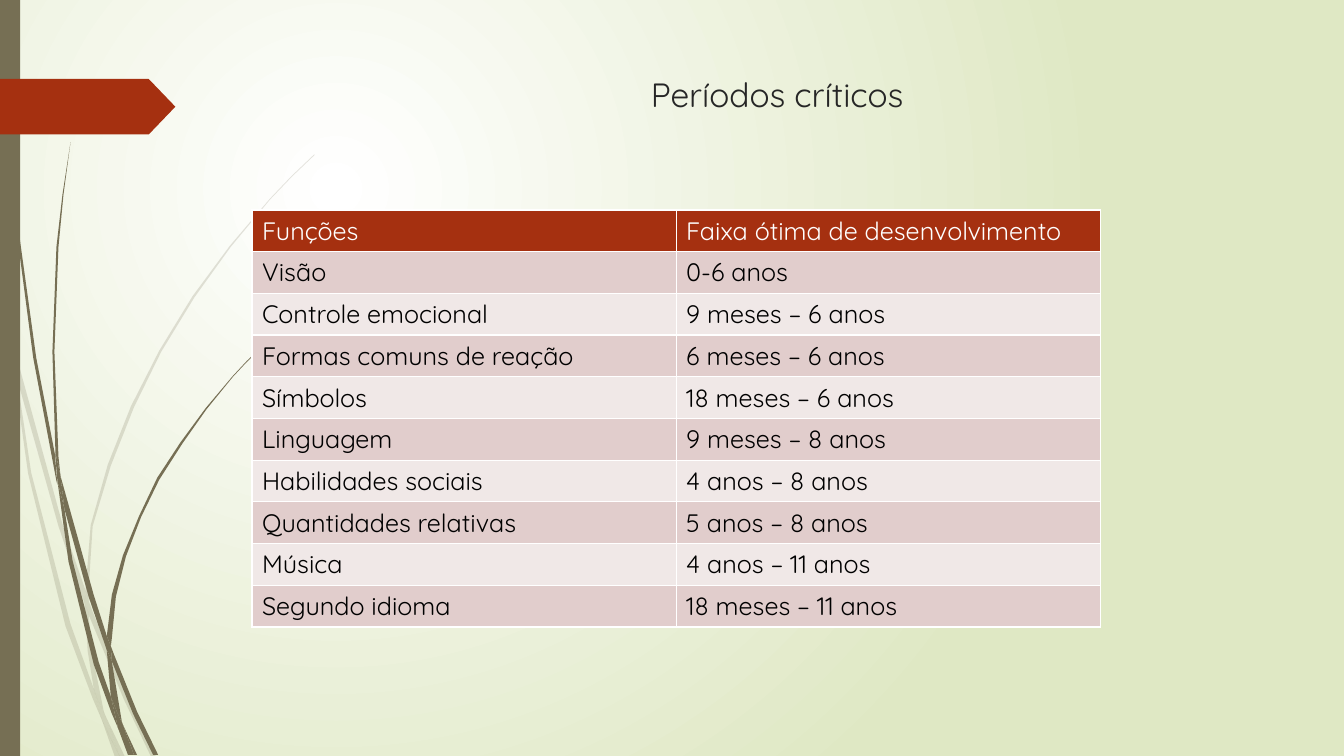
import lxml.etree
import pptx
import pptx.dml.color
import pptx.enum.shapes
import pptx.enum.text
import pptx.oxml
import pptx.oxml.ns
import pptx.util

Cm = pptx.util.Cm
Pt = pptx.util.Pt
qn = pptx.oxml.ns.qn

FONT = "Quicksand"
COLOURS = {
    "white": "FFFFFF",
    "background": "DFE8C4",
    "olive": "766F54",
    "rust": "A53010",
    "title": "262626",
    "body": "000000",
    "odd_row": "E1CDCC",
    "even_row": "F0E8E7",
}

# Outlines of the grass blades, in 1/750 of the slide height.
FAINT_BLADES = [
    [(11, 350), (9, 322), (0, 282), (0, 299), (10, 344)],
    [(58, 522), (84, 599), (85, 586), (62, 520), (14, 345), (17, 376)],
    [(92, 607), (88, 596), (88, 610), (123, 694), (150, 751), (155, 751), (127, 692)],
    [(119, 751), (124, 751), (105, 711)],
    [(93, 683), (70, 619), (31, 469), (17, 376), (11, 350), (28, 470), (65, 621),
     (92, 693), (101, 714), (99, 707)],
    [(84, 599), (87, 646), (93, 683), (96, 692), (105, 711), (103, 706), (91, 646),
     (88, 610), (88, 608)],
    [(88, 584), (92, 522), (110, 462), (133, 404), (160, 349), (193, 295), (229, 245),
     (268, 198), (290, 175), (312, 154), (312, 153), (289, 175), (268, 197),
     (228, 244), (191, 294), (158, 348), (130, 403), (107, 461), (90, 521), (85, 584),
     (85, 586), (88, 596)],
    [(101, 714), (114, 751), (119, 751)],
    [(88, 608), (88, 610), (88, 596), (85, 586), (84, 599)],
    [(96, 692), (93, 683), (99, 707), (101, 714), (119, 751), (105, 711)],
]
DARK_BLADES = [
    [(7, 110), (17, 233), (33, 355), (56, 477), (57, 481), (55, 457), (55, 453),
     (36, 355), (19, 232), (8, 109), (5, 48), (4, 0), (3, 0), (4, 48)],
    [(88, 592), (106, 645), (106, 633), (106, 631), (93, 590), (60, 472), (64, 505)],
    [(113, 649), (110, 641), (111, 656), (132, 708), (152, 749), (157, 749), (136, 706)],
    [(110, 691), (98, 657), (72, 556), (64, 505), (57, 477), (68, 557), (93, 659),
     (111, 708), (117, 722), (116, 717)],
    [(60, 472), (58, 453), (54, 349), (58, 245), (63, 193), (70, 141), (62, 193),
     (56, 245), (52, 349), (55, 449)],
    [(133, 749), (136, 749), (122, 719)],
    [(57, 477), (64, 505), (60, 472), (55, 449), (55, 453)],
    [(111, 633), (115, 592), (125, 552), (140, 513), (158, 476), (181, 440), (205, 406),
     (231, 374), (245, 359), (261, 344), (260, 344), (245, 358), (231, 373),
     (204, 405), (179, 439), (156, 474), (138, 512), (122, 551), (111, 590),
     (106, 631), (110, 641)],
    [(117, 722), (127, 749), (131, 749)],
    [(106, 645), (110, 691), (116, 706), (122, 719), (121, 716), (111, 656), (109, 651)],
    [(106, 645), (109, 651), (111, 656), (110, 641), (106, 631), (106, 633)],
    [(116, 706), (110, 691), (116, 717), (117, 722), (130, 749), (133, 749), (122, 719)],
]

PERIODS = [
    ("Funções", "Faixa ótima de desenvolvimento"),
    ("Visão", "0-6 anos"),
    ("Controle emocional", "9 meses – 6 anos"),
    ("Formas comuns de reação", "6 meses – 6 anos"),
    ("Símbolos", "18 meses – 6 anos"),
    ("Linguagem", "9 meses – 8 anos"),
    ("Habilidades sociais", "4 anos – 8 anos"),
    ("Quantidades relativas", "5 anos – 8 anos"),
    ("Música", "4 anos – 11 anos"),
    ("Segundo idioma", "18 meses – 11 anos"),
]


def rgb(name):
    return pptx.dml.color.RGBColor.from_string(COLOURS[name])


def paint(shape, colour, opacity=100):
    shape.shadow.inherit = False
    shape.fill.solid()
    shape.fill.fore_color.rgb = rgb(colour)
    shape.line.fill.background()
    if opacity < 100:
        colour_element = shape._element.spPr.find(qn("a:solidFill"))[0]
        alpha = lxml.etree.SubElement(colour_element, qn("a:alpha"))
        alpha.set("val", str(opacity * 1000))


def format_text(paragraph, size, colour):
    for run in paragraph.runs:
        run.font.name = FONT
        run.font.size = Pt(size)
        run.font.bold = False
        run.font.color.rgb = rgb(colour)


def draw_background(slide):
    fill = slide.background.fill
    fill.gradient()
    for stop, colour in zip(fill.gradient_stops, ("white", "background")):
        stop.color.rgb = rgb(colour)
    gradient = slide._element.cSld.find(".//" + qn("a:gradFill"))
    linear = gradient.find(qn("a:lin"))
    circle = pptx.oxml.parse_xml(
        '<a:path xmlns:a="http://schemas.openxmlformats.org/drawingml/2006/main" '
        'path="circle"><a:fillToRect l="50000" t="50000" r="100000" b="100000"/></a:path>'
    )
    gradient.replace(linear, circle)


def draw_grass(slide, box, blades, opacity):
    left, top, _, height = box
    unit = height / 750
    group = slide.shapes.add_group_shape()
    for blade in blades:
        outline = [(left + x * unit, top + y * unit) for x, y in blade]
        builder = group.shapes.build_freeform(*outline[0])
        builder.add_line_segments(outline[1:])
        paint(builder.convert_to_shape(), "olive", opacity)


def draw_left_decoration(slide, box):
    left, top, _, height = box
    draw_grass(slide, box, FAINT_BLADES, 20)
    draw_grass(slide, box, DARK_BLADES, 100)
    shapes = pptx.enum.shapes.MSO_SHAPE
    band = slide.shapes.add_shape(shapes.RECTANGLE, left, top, Cm(0.51), height)
    paint(band, "olive")
    arrow = slide.shapes.add_shape(
        shapes.PENTAGON, left, top + Cm(1.99), Cm(4.42), Cm(1.4))
    arrow.adjustments[0] = 0.48
    paint(arrow, "rust")


def place_title(slide, box, text):
    title = slide.shapes.title
    title.left, title.top, title.width, title.height = box
    frame = title.text_frame
    frame.text = text
    frame.vertical_anchor = pptx.enum.text.MSO_ANCHOR.TOP
    frame.paragraphs[0].alignment = pptx.enum.text.PP_ALIGN.CENTER
    format_text(frame.paragraphs[0], 24, "title")


def set_borders(cell):
    properties = cell._tc.get_or_add_tcPr()
    for position, side in enumerate(("lnL", "lnR", "lnT", "lnB")):
        border = lxml.etree.Element(qn("a:" + side), w=str(Pt(1)))
        fill = lxml.etree.SubElement(border, qn("a:solidFill"))
        lxml.etree.SubElement(fill, qn("a:srgbClr"), val=COLOURS["white"])
        properties.insert(position, border)


def add_period_table(slide, box):
    table = slide.shapes.add_table(len(PERIODS), len(PERIODS[0]), *box).table
    for row_index, row in enumerate(PERIODS):
        if row_index == 0:
            fill, ink = "rust", "white"
        else:
            fill, ink = ("odd_row" if row_index % 2 else "even_row"), "body"
        for column_index, text in enumerate(row):
            cell = table.cell(row_index, column_index)
            cell.text_frame.text = text
            format_text(cell.text_frame.paragraphs[0], 18, ink)
            cell.fill.solid()
            cell.fill.fore_color.rgb = rgb(fill)
            set_borders(cell)


def main():
    presentation = pptx.Presentation()
    presentation.slide_width = Cm(33.87)
    presentation.slide_height = Cm(19.05)
    slide = presentation.slides.add_slide(presentation.slide_layouts[5])
    draw_background(slide)
    draw_left_decoration(slide, (0, 0, Cm(7.95), presentation.slide_height))
    place_title(slide, (Cm(7.2), Cm(1.73), Cm(24.77), Cm(3.56)), "Períodos críticos")
    add_period_table(slide, (Cm(6.35), Cm(5.29), Cm(21.38), Cm(10.3)))
    presentation.save("out.pptx")


if __name__ == "__main__":
    main()
